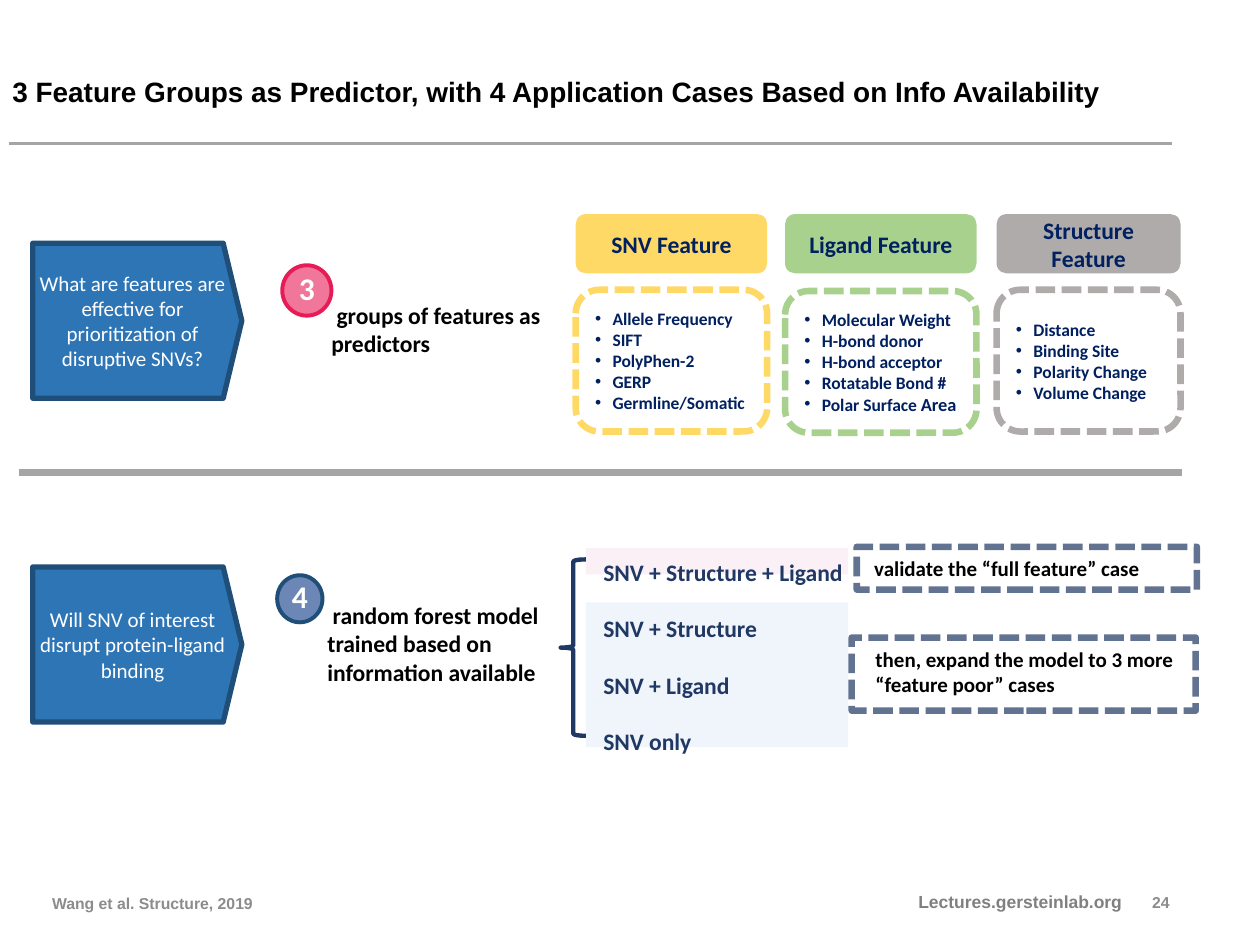
from lxml import etree
from pptx import Presentation
from pptx.dml.color import RGBColor
from pptx.enum import dml, shapes, text
from pptx.oxml import ns
from pptx.util import Pt

WHITE = RGBColor(0xFF, 0xFF, 0xFF)
BLACK = RGBColor(0, 0, 0)
GRAY = RGBColor(0x80, 0x80, 0x80)
LIGHT_GRAY = RGBColor(0x8C, 0x8C, 0x8C)
RULE_GRAY = RGBColor(0xA5, 0xA5, 0xA5)
NAVY = RGBColor(0x00, 0x20, 0x60)
DARK_BLUE = RGBColor(0x20, 0x38, 0x64)
BLUE = RGBColor(0x2E, 0x75, 0xB6)
EDGE_BLUE = RGBColor(0x1F, 0x4E, 0x79)
MID_BLUE = RGBColor(0x2F, 0x55, 0x97)
PALE_BLUE = RGBColor(0xDE, 0xEB, 0xF7)
PALE_PINK = RGBColor(0xF4, 0xC6, 0xE0)
RED = RGBColor(0xE7, 0x1C, 0x57)
YELLOW = RGBColor(0xFF, 0xD9, 0x66)
GREEN = RGBColor(0xA9, 0xD1, 0x8E)
WARM_GRAY = RGBColor(0xAF, 0xAB, 0xAB)

CENTER, RIGHT = text.PP_ALIGN.CENTER, text.PP_ALIGN.RIGHT
MIDDLE = text.MSO_ANCHOR.MIDDLE
KIND = shapes.MSO_SHAPE

TITLE = "3 Feature Groups as Predictor, with 4 Application Cases Based on Info Availability"
RULES = [((5, 82), (669.6, 82), 1.5), ((10.8, 270), (675.4, 270), 3.75)]
BACKDROPS = [((334.8, 344.2, 149.8, 82.8), PALE_BLUE, 45),
             ((334.8, 313.2, 149.8, 15.1), PALE_PINK, 25)]
QUESTIONS = [(139, "What are features are effective for prioritization of disruptive SNVs?"),
             (324, "Will SNV of interest disrupt protein-ligand binding")]
ANSWERS = [((182.2, 168.5, 166.3, 40.3), " groups of features as predictors"),
           ((180, 339.8, 166.3, 56.2),
            " random forest model trained based on information available")]
BADGES = [((161.3, 151.6, 28.1, 28.8), "3", RED, 60, RED),
          ((158.4, 328.7, 25.9, 26.9), "4", MID_BLUE, 70, EDGE_BLUE)]
FEATURES = [
    (329, 109.4, 165.6, YELLOW, "SNV Feature",
     ["Allele Frequency", "SIFT", "PolyPhen-2", "GERP", "Germline/Somatic"]),
    (448.6, 109.4, 166.3, GREEN, "Ligand Feature",
     ["Molecular Weight", "H-bond donor", "H-bond acceptor", "Rotatable Bond #",
      [("Polar Surface ", 10), ("Area", 10.5)]]),
    (569.5, 105.1, 165.6, WARM_GRAY, "Structure Feature",
     ["Distance", "Binding Site", "Polarity Change", "Volume Change"]),
]
CASES = ["SNV + Structure + Ligand", "SNV + Structure", "SNV + Ligand", "SNV only"]
NOTES = [((492.5, 313.9, 194.4, 21.6), (489.6, 312.5, 194.4, 24.5),
          "validate the “full feature” case"),
         ((493.2, 365.8, 194.4, 36), (486.7, 364.3, 196.6, 41.8),
          "then, expand the model to 3 more “feature poor” cases")]

presentation = Presentation()
presentation.slide_width, presentation.slide_height = Pt(720), Pt(540)
slide = presentation.slides.add_slide(presentation.slide_layouts[6])


def set_opacity(fill, percent):
    color = fill._xPr.find(ns.qn("a:solidFill"))[0]
    etree.SubElement(color, ns.qn("a:alpha"), val=str(percent * 1000))


def add_bullet(paragraph):
    properties = paragraph._p.get_or_add_pPr()
    properties.set("marL", str(Pt(10)))
    properties.set("indent", str(-Pt(10)))
    etree.SubElement(properties, ns.qn("a:buFont"), typeface="Arial")
    etree.SubElement(properties, ns.qn("a:buChar"), char="•")


def write(shape, paragraphs, size, color, font="Calibri", bold=True, align=text.PP_ALIGN.LEFT,
          anchor=text.MSO_ANCHOR.TOP, wrap=True, spacing=None, bullets=False, inset=True):
    frame = shape.text_frame
    frame.word_wrap = wrap
    frame.vertical_anchor = anchor
    if not inset:
        frame.margin_left = frame.margin_top = frame.margin_right = frame.margin_bottom = 0
    for index, content in enumerate(paragraphs):
        paragraph = frame.add_paragraph() if index else frame.paragraphs[0]
        paragraph.alignment = align
        if spacing:
            paragraph.line_spacing = spacing
        if bullets:
            add_bullet(paragraph)
        runs = [(content, size)] if isinstance(content, str) else content
        for words, run_size in runs:
            run = paragraph.add_run()
            run.text = words
            run.font.name, run.font.size, run.font.bold = font, Pt(run_size), bold
            run.font.color.rgb = color


def add_text(place, paragraphs, size, color, grow=True, **style):
    box = slide.shapes.add_textbox(*map(Pt, place))
    write(box, paragraphs, size, color, **style)
    if grow:
        box.text_frame.auto_size = text.MSO_AUTO_SIZE.SHAPE_TO_FIT_TEXT


def add_shape(kind, place, fill=None, opacity=None, line=None, width=0, dashed=False,
              line_opacity=None):
    shape = slide.shapes.add_shape(kind, *map(Pt, place))
    shape.shadow.inherit = False
    if fill is None:
        shape.fill.background()
    else:
        shape.fill.solid()
        shape.fill.fore_color.rgb = fill
        if opacity:
            set_opacity(shape.fill, opacity)
    if line is None:
        shape.line.fill.background()
    else:
        shape.line.color.rgb = line
        shape.line.width = Pt(width)
        if dashed:
            shape.line.dash_style = dml.MSO_LINE.SQUARE_DOT
        if line_opacity:
            set_opacity(shape.line.fill, line_opacity)
    return shape


for place, color, opacity in BACKDROPS:
    add_shape(KIND.RECTANGLE, place, color, opacity)

for start, end, width in RULES:
    rule = slide.shapes.add_connector(shapes.MSO_CONNECTOR.STRAIGHT, *map(Pt, start + end))
    rule.line.color.rgb = RULE_GRAY
    rule.line.width = Pt(width)
    etree.SubElement(rule._element.spPr, ns.qn("a:effectLst"))

add_text((0, 38.9, 740.9, 26.6), [TITLE], 16, BLACK, font="Arial")
add_text((337.7, 298.8, 152.6, 138.2), CASES, 13.5, DARK_BLUE, wrap=False, spacing=2.0)
add_shape(KIND.LEFT_BRACE, (320.4, 319.7, 14.4, 100.8), line=DARK_BLUE, width=2.5)

for top, question in QUESTIONS:
    arrow = add_shape(KIND.PENTAGON, (18.7, top, 119.5, 88.6), BLUE, line=EDGE_BLUE, width=3)
    arrow.adjustments[0] = 0.12
    write(arrow, [question], 12, WHITE, bold=False, align=CENTER, anchor=MIDDLE, inset=False)

for place, answer in ANSWERS:
    add_text(place, [answer], 13.5, BLACK)

for place, number, fill, opacity, edge in BADGES:
    badge = add_shape(KIND.OVAL, place, fill, opacity, edge, 2.25)
    write(badge, [number], 18, WHITE, align=CENTER, anchor=MIDDLE, wrap=False,
          spacing=0.9, inset=False)
    badge.text_frame.paragraphs[0].space_after = Pt(7.5)

for left, width, top, color, heading, items in FEATURES:
    header = add_shape(KIND.ROUNDED_RECTANGLE, (left, 122.4, width, 33.8), color)
    write(header, [heading], 13.5, NAVY, align=CENTER, anchor=MIDDLE)
    panel = add_shape(KIND.ROUNDED_RECTANGLE, (left, top, width, 81), line=color, width=3.75,
                      dashed=True)
    write(panel, items, 10, NAVY, anchor=MIDDLE, bullets=True)

for text_place, frame_place, note in NOTES:
    add_text(text_place, [note], 12, BLACK)
    add_shape(KIND.RECTANGLE, frame_place, line=DARK_BLUE, width=3.75, dashed=True,
              line_opacity=70)

add_text((517.7, 505.4, 216.7, 19.4), ["Lectures.gersteinlab.org"], 10, GRAY, font="Arial")
add_text((513.4, 504.7, 162, 21.6), ["24"], 9, LIGHT_GRAY, grow=False, font="Arial",
         align=RIGHT, anchor=MIDDLE)
add_text((-74.9, 502.6, 324, 26.6), ["Wang et al. Structure, 2019"], 9, LIGHT_GRAY, grow=False,
         font="Arial", align=CENTER, anchor=MIDDLE)

presentation.save("out.pptx")
